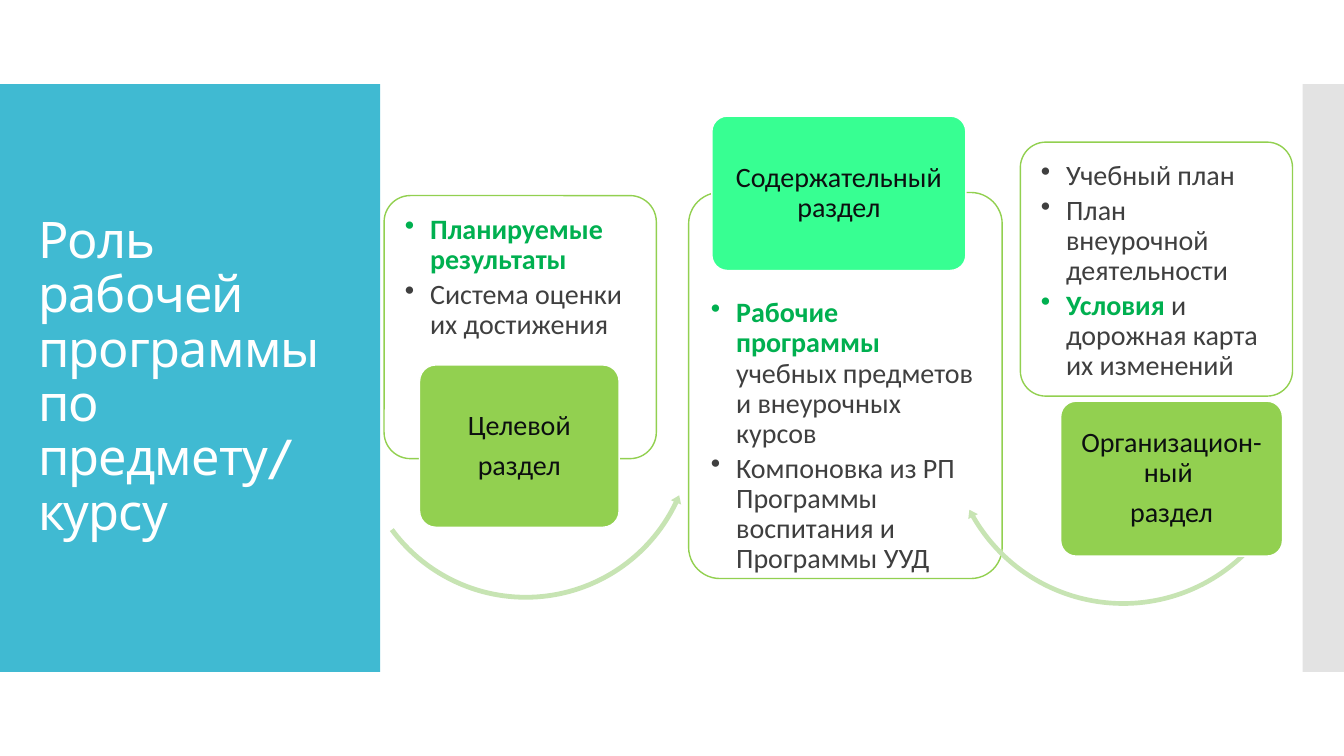
from dataclasses import dataclass

from lxml import etree
from pptx import Presentation
from pptx import util as u
from pptx.dml.color import RGBColor
from pptx.enum import shapes, text
from pptx.oxml.ns import qn

W, H = 13.33, 7.5
SHAPE = shapes.MSO_SHAPE


@dataclass(frozen=True)
class Theme:
    panel: str = "40BAD2"
    strip: str = "C8C8C8"
    white: str = "FFFFFF"
    green: str = "92D050"
    mint: str = "37FF92"
    arrow: str = "C7E4B3"
    accent: str = "00B050"
    body: str = "3F3F3F"
    tag_text: str = "0C0F10"
    title_font: str = "Cabin"
    body_font: str = "Calibri"
    title_size: int = 36
    body_size: int = 20


T = Theme()


def inner(box, shares):
    """Box given by shares (left, top, width, height) of another box."""
    x, y, w, h = box
    sx, sy, sw, sh = shares
    return x + sx * w, y + sy * h, sw * w, sh * h


def add_shape(sl, kind, box, fill, line=None, opacity=None, adj=()):
    sp = sl.shapes.add_shape(kind, *map(u.Inches, box))
    sp.shadow.inherit = False
    sp.fill.solid()
    sp.fill.fore_color.rgb = RGBColor.from_string(fill)
    if opacity:
        color = sp.fill._xPr.find(".//" + qn("a:srgbClr"))
        etree.SubElement(color, qn("a:alpha"), val=str(opacity * 1000))
    if line:
        sp.line.color.rgb = RGBColor.from_string(line)
        sp.line.width = u.Pt(1)
    else:
        sp.line.fill.background()
    for i, value in enumerate(adj):
        sp.adjustments[i] = value
    return sp


def set_frame(sp, anchor, insets):
    tf = sp.text_frame
    tf.word_wrap = True
    tf.vertical_anchor = anchor
    tf.margin_left, tf.margin_top, tf.margin_right, tf.margin_bottom = map(u.Inches, insets)
    return tf


def add_paragraph(tf, first, align, after=0):
    p = tf.paragraphs[0] if first else tf.add_paragraph()
    p.alignment = align
    p.line_spacing = 0.9
    p.space_after = u.Pt(after)
    return p


def add_run(p, words, color, font=T.body_font, size=T.body_size, bold=False):
    r = p.add_run()
    r.text = words
    r.font.name, r.font.size, r.font.bold = font, u.Pt(size), bold
    r.font.color.rgb = RGBColor.from_string(color)
    return r


def add_bullet(p):
    pPr = p._p.get_or_add_pPr()
    indent = u.Inches(0.25)
    pPr.set("marL", str(indent))
    pPr.set("indent", str(-indent))
    etree.SubElement(pPr, qn("a:buChar"), char="•")


def title_panel(sl, box, title):
    add_shape(sl, SHAPE.RECTANGLE, box, T.panel)
    tb = sl.shapes.add_textbox(*map(u.Inches, inner(box, (0.074, 0.07, 0.854, 0.86))))
    tf = set_frame(tb, text.MSO_ANCHOR.MIDDLE, (0.1, 0.05, 0.1, 0.05))
    p = add_paragraph(tf, True, text.PP_ALIGN.LEFT)
    r = add_run(p, title, T.white, T.title_font, T.title_size)
    r._r.get_or_add_rPr().set("spc", "-60")


def section(sl, box, bullets, tag_shares, tag_lines, tag_fill=T.green, text_top=0.12):
    """Outlined card of bullets with a filled tag; tag_shares are shares of the card.

    Each bullet is an (accented words, plain words) pair.
    """
    card = add_shape(sl, SHAPE.ROUNDED_RECTANGLE, box, T.white, T.green, 90, (0.1,))
    tf = set_frame(card, text.MSO_ANCHOR.TOP, (0.13, text_top, 0.13, 0.12))
    for i, (strong, plain) in enumerate(bullets):
        p = add_paragraph(tf, i == 0, text.PP_ALIGN.LEFT, 3)
        add_bullet(p)
        if strong:
            add_run(p, strong, T.accent, bold=True)
        if plain:
            add_run(p, plain, T.body)

    tag = add_shape(sl, SHAPE.ROUNDED_RECTANGLE, inner(box, tag_shares), tag_fill, T.white,
                    adj=(0.1,))
    tf = set_frame(tag, text.MSO_ANCHOR.MIDDLE, (0.04, 0.03, 0.04, 0.03))
    for i, line in enumerate(tag_lines):
        p = add_paragraph(tf, i == 0, text.PP_ALIGN.CENTER, 7)
        add_run(p, line, T.tag_text)


def arc_arrow(sl, kind, box, adj, rotation=0):
    sp = add_shape(sl, kind, box, T.arrow, adj=adj)
    sp.rotation = rotation


def program_slide(prs):
    sl = prs.slides.add_slide(prs.slide_layouts[6])
    band_top, band_height = H / 9, H * 7 / 9
    title_panel(sl, (0, band_top, 3.77, band_height),
                "Роль рабочей программы по предмету/ курсу")
    add_shape(sl, SHAPE.RECTANGLE, (W - 0.41, band_top, 0.41, band_height), T.strip, opacity=50)

    section(sl, (3.81, 1.94, 2.7, 2.61),
            [("Планируемые результаты", ""), ("", "Система оценки их достижения")],
            (0.13, 0.644, 0.733, 0.617), ["Целевой", "раздел"])
    arc_arrow(sl, SHAPE.LEFT_CIRCULAR_ARROW, (3.51, 2.57, 3.41, 3.41),
              (0.014, 1.598, 15.268, 86.16, 0.016))
    section(sl, (6.83, 1.91, 3.11, 3.83),
            [("Рабочие программы ", "учебных предметов и внеурочных курсов"),
             ("", "Компоновка из РП Программы воспитания и Программы УУД")],
            (0.074, -0.198, 0.81, 0.4), ["Содержательный раздел"], T.mint, 0.96)
    arc_arrow(sl, SHAPE.CIRCULAR_ARROW, (9.37, 2.5, 3.54, 3.54),
              (0.013, 1.534, 202.18, 131.225, 0.015), 173.2)
    section(sl, (10.12, 1.41, 2.7, 2.52),
            [("", "Учебный план"), ("", "План внеурочной деятельности"),
             ("Условия", " и дорожная карта их изменений")],
            (0.148, 1.02, 0.815, 0.61), ["Организацион-ный ", "раздел"])


def main():
    prs = Presentation()
    prs.slide_width, prs.slide_height = u.Inches(W), u.Inches(H)
    program_slide(prs)
    prs.save("out.pptx")


if __name__ == "__main__":
    main()
